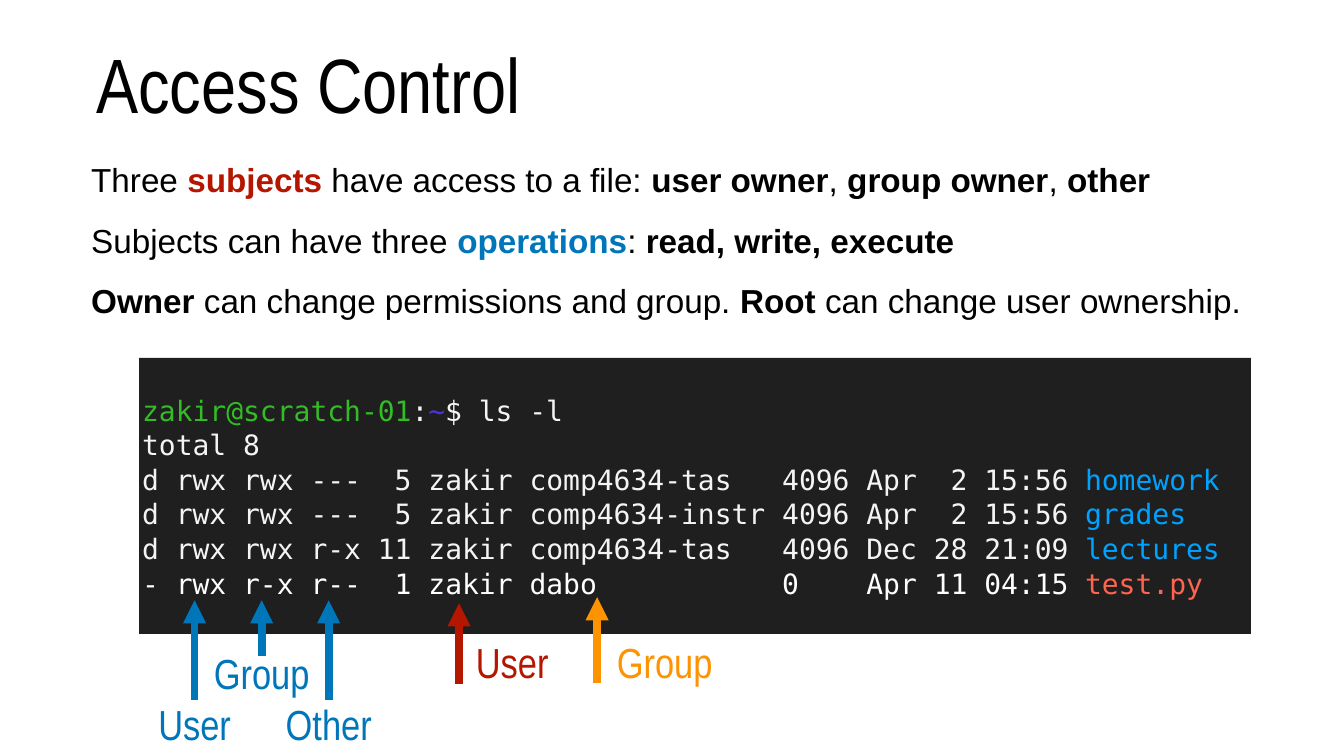
from lxml.etree import SubElement
from pptx import Presentation
from pptx.dml.color import RGBColor
from pptx.enum.shapes import MSO_CONNECTOR, MSO_SHAPE
from pptx.enum.text import MSO_ANCHOR, PP_ALIGN
from pptx.oxml.ns import qn
from pptx.util import Inches, Pt

BLACK = RGBColor(0x00, 0x00, 0x00)
RED = RGBColor(0xB5, 0x16, 0x00)
BLUE = RGBColor(0x00, 0x76, 0xBA)
ORANGE = RGBColor(0xFE, 0x93, 0x01)
DARK = RGBColor(0x1F, 0x1F, 0x1F)
LIGHT = RGBColor(0xF4, 0xF4, 0xF4)
WHITE = RGBColor(0xFF, 0xFF, 0xFF)
GREEN = RGBColor(0x34, 0xBC, 0x26)
VIOLET = RGBColor(0x52, 0x30, 0xE1)
SKY = RGBColor(0x00, 0xA2, 0xFF)
CORAL = RGBColor(0xFF, 0x64, 0x4E)

prs = Presentation()
prs.slide_width, prs.slide_height = Inches(26.67), Inches(15)
s = prs.slides.add_slide(prs.slide_layouts[6])


def share(x, y, w, h):
    W, H = prs.slide_width, prs.slide_height
    return [int(v * side / 100) for v, side in ((x, W), (y, H), (w, W), (h, H))]


def write(sp, paragraphs, *, font, size, align=PP_ALIGN.LEFT, wrap=True, spacing=None, before=0):
    tf = sp.text_frame
    tf.word_wrap = wrap
    tf.vertical_anchor = MSO_ANCHOR.MIDDLE
    tf.margin_left = tf.margin_right = tf.margin_top = tf.margin_bottom = Inches(0.06)
    for i, runs in enumerate(paragraphs):
        p = tf.paragraphs[0] if i == 0 else tf.add_paragraph()
        p.alignment, p.line_spacing, p.space_before = align, spacing, Pt(before)
        for text, color, bold in runs:
            r = p.add_run()
            r.text = text
            r.font.name, r.font.size, r.font.bold = font, Pt(size), bold
            r.font.color.rgb = color


title = s.shapes.add_textbox(*share(6.94, 2.6, 86.13, 16.67))
write(title, [[("Access Control", BLACK, False)]], font="Arial Narrow", size=110)

rules = [
    [("Three ", BLACK, False), ("subjects", RED, True), (" have access to a file: ", BLACK, False),
     ("user owner", BLACK, True), (", ", BLACK, False), ("group owner", BLACK, True),
     (", ", BLACK, False), ("other", BLACK, True)],
    [("Subjects can have three ", BLACK, False), ("operations", BLUE, True),
     (": ", BLACK, False), ("read, write, execute", BLACK, True)],
    [("Owner", BLACK, True), (" can change permissions and group. ", BLACK, False),
     ("Root", BLACK, True), (" can change user ownership.", BLACK, False)],
]
body = s.shapes.add_textbox(*share(6.56, 20.6, 86.88, 22.93))
write(body, rules, font="Arial", size=47.5, spacing=0.9, before=35)

files = [
    ("d rwx rwx ---  5 zakir comp4634-tas   4096 Apr  2 15:56 ", LIGHT, "homework", SKY),
    ("d rwx rwx ---  5 zakir comp4634-instr 4096 Apr  2 15:56 ", LIGHT, "grades", SKY),
    ("d rwx rwx r-x 11 zakir comp4634-tas   4096 Dec 28 21:09 ", LIGHT, "lectures", SKY),
    ("- rwx r-x r--  1 zakir dabo           0    Apr 11 04:15 ", WHITE, "test.py", CORAL),
]
listing = [
    [("zakir@scratch-01", GREEN, False), (":", LIGHT, False), ("~", VIOLET, False),
     ("$ ls -l", LIGHT, False)],
    [("total 8", LIGHT, False)],
]
for details, color, name, name_color in files:
    listing.append([(details, color, False), (name, name_color, False)])
terminal = s.shapes.add_shape(MSO_SHAPE.RECTANGLE, *share(10.35, 47.33, 82.72, 36.53))
terminal.shadow.inherit = False
terminal.fill.solid()
terminal.fill.fore_color.rgb = DARK
terminal.line.fill.background()
write(terminal, listing, font="DejaVu Sans Mono", size=40, spacing=1.03)

LABEL_W, LABEL_H = 7.87, 7.33
first, step = 14.48, 4.99
pointers = [
    ("User", RED, 38.11, 83.87, 34.16, 90.47, 79.8),
    ("Group", ORANGE, 49.46, 83.87, 44.43, 90.4, 79),
]
for i, (name, label_y, tail_y) in enumerate([("User", 92, 92.6), ("Group", 85.27, 86.73), ("Other", 92, 92.6)]):
    column = first + i * step
    pointers.append((name, BLUE, column, label_y, column, tail_y, 79.4))

for name, color, label_x, label_y, arrow_x, tail_y, tip_y in pointers:
    label = s.shapes.add_textbox(*share(label_x - LABEL_W / 2, label_y, LABEL_W, LABEL_H))
    write(label, [[(name, color, False)]], font="Arial Narrow", size=60, align=PP_ALIGN.CENTER, wrap=False)
    arrow = s.shapes.add_connector(MSO_CONNECTOR.STRAIGHT, *share(arrow_x, tail_y, arrow_x, tip_y))
    arrow.line.color.rgb = color
    arrow.line.width = Pt(11)
    SubElement(arrow.line._get_or_add_ln(), qn("a:tailEnd"), type="triangle")
    SubElement(arrow._element.spPr, qn("a:effectLst"))

prs.save("out.pptx")
